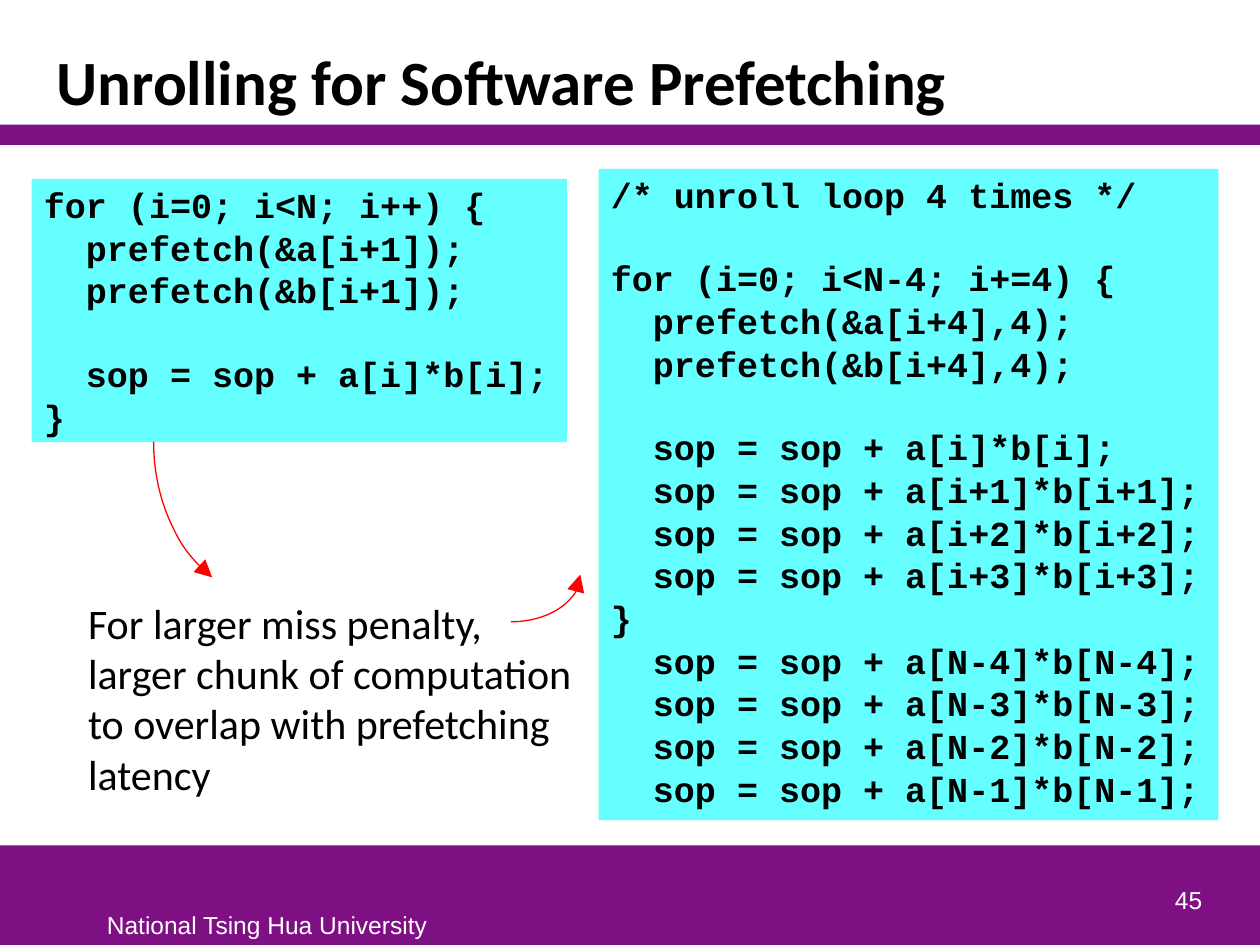
import pptx
import pptx.util
import pptx.dml.color
import pptx.enum.shapes
import pptx.enum.text
from lxml import etree

Inches, Pt = pptx.util.Inches, pptx.util.Pt
SHAPE = pptx.enum.shapes.MSO_SHAPE
ALIGN = pptx.enum.text.PP_ALIGN
ANCHOR = pptx.enum.text.MSO_ANCHOR

LOOP = """for (i=0; i<N; i++) {
  prefetch(&a[i+1]);
  prefetch(&b[i+1]);

  sop = sop + a[i]*b[i];
}"""

UNROLLED = """/* unroll loop 4 times */

for (i=0; i<N-4; i+=4) {
  prefetch(&a[i+4],4);
  prefetch(&b[i+4],4);

  sop = sop + a[i]*b[i];
  sop = sop + a[i+1]*b[i+1];
  sop = sop + a[i+2]*b[i+2];
  sop = sop + a[i+3]*b[i+3];
}
  sop = sop + a[N-4]*b[N-4];
  sop = sop + a[N-3]*b[N-3];
  sop = sop + a[N-2]*b[N-2];
  sop = sop + a[N-1]*b[N-1];"""


def color(text):
    return pptx.dml.color.RGBColor.from_string(text)


class Deck:
    purple, cyan, red = "7F1084", "66FFFF", "FF0000"
    black, white = "000000", "FFFFFF"
    gap, pitch = 5.2, 23.3  # points between code lines, and per line

    def __init__(self):
        self.prs = pptx.Presentation()
        self.prs.slide_width, self.prs.slide_height = Inches(10), Inches(7.5)
        self.slide = self.prs.slides.add_slide(self.prs.slide_layouts[5])

    def style(self, para, face, size, tint, bold=False):
        font = para.font
        font.name, font.size, font.bold = face, Pt(size), bold
        font.color.rgb = color(tint)

    def title(self, text, *box):
        head = self.slide.shapes.title
        head.left, head.top, head.width, head.height = map(Inches, box)
        frame = head.text_frame
        frame.text = text
        frame.vertical_anchor = ANCHOR.BOTTOM
        para = frame.paragraphs[0]
        para.alignment, para.line_spacing = ALIGN.LEFT, 0.85
        self.style(para, "Calibri", 36, self.black, True)

    def shape(self, kind, *box):
        item = self.slide.shapes.add_shape(kind, *map(Inches, box))
        item.shadow.inherit = False
        return item

    def block(self, fill, *box):
        item = self.shape(SHAPE.RECTANGLE, *box)
        item.fill.solid()
        item.fill.fore_color.rgb = color(fill)
        item.line.fill.background()
        return item

    def code(self, text, *box):
        frame = self.block(self.cyan, *box).text_frame
        frame.word_wrap = True
        frame.vertical_anchor = ANCHOR.TOP
        frame.margin_top = Inches(0.1)
        para, skip = None, 0
        for line in text.splitlines():
            if not line:  # an empty line becomes space before the next
                skip += 1
                continue
            if para is None:
                para = frame.paragraphs[0]
            else:
                para = frame.add_paragraph()
                para.space_before = Pt(self.gap + skip * self.pitch)
            para.text = line
            para.alignment, para.line_spacing = ALIGN.LEFT, 0.8
            self.style(para, "Courier New", 20, self.black, True)
            skip = 0

    def text(self, words, box, face, size, tint, wrap=True,
             align=ALIGN.LEFT, anchor=ANCHOR.TOP):
        frame = self.slide.shapes.add_textbox(*map(Inches, box)).text_frame
        frame.word_wrap, frame.vertical_anchor = wrap, anchor
        frame.text = words
        para = frame.paragraphs[0]
        para.alignment = align
        self.style(para, face, size, tint)

    def arc(self, box, turn, ends=()):
        item = self.shape(SHAPE.ARC, *box)
        item.rotation = turn
        for i, end in enumerate(ends):
            item.adjustments[i] = end
        item.fill.background()
        item.line.color.rgb = color(self.red)
        item.line.width = Pt(0.75)
        tip = etree.SubElement(item.line._get_or_add_ln(),
                               pptx.oxml.ns.qn("a:headEnd"))
        for key, val in (("type", "triangle"), ("w", "lg"), ("len", "lg")):
            tip.set(key, val)


def main():
    deck = Deck()

    # Bands and footer
    deck.block(deck.purple, 0, 6.71, 10, 0.79)
    deck.block(deck.purple, 0, 0.99, 10, 0.16)
    deck.text("National Tsing Hua University", (0.75, 7.17, 2.76, 0.33),
              "Arial", 14, deck.white, wrap=False)

    # Title
    deck.title("Unrolling for Software Prefetching", 0.35, 0.25, 9.29, 0.74)

    # Code before and after unrolling
    deck.code(LOOP, 0.25, 1.42, 4.25, 2.09)
    deck.code(UNROLLED, 4.75, 1.34, 4.92, 5.17)

    # Remark with its curved arrows
    deck.text("For larger miss penalty, larger chunk of computation "
              "to overlap with prefetching latency",
              (0.6, 4.69, 4.08, 1.72), "Calibri", 24, deck.black)
    deck.arc((3.68, 4.01, 0.75, 1.1), 90)
    deck.arc((0.94, 2.53, 2.52, 1.96), 270, (123.4, 162.13))

    # Page number
    deck.text("45", (7.56, 6.81, 2.08, 0.5), "Arial", 14, deck.white,
              align=ALIGN.RIGHT, anchor=ANCHOR.BOTTOM)

    deck.prs.save("out.pptx")


if __name__ == "__main__":
    main()
